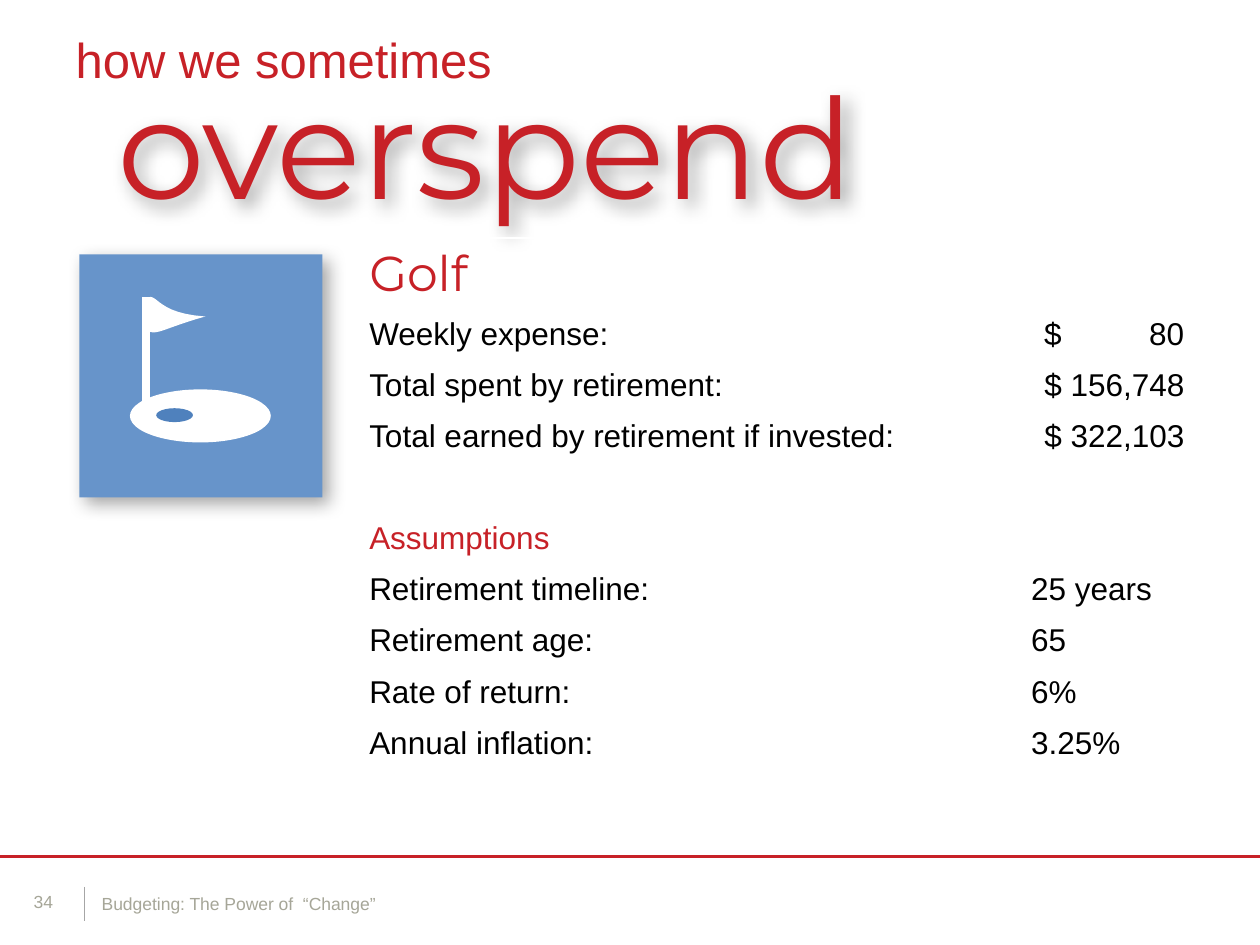
from lxml import etree
from pptx import Presentation
from pptx.dml.color import RGBColor
from pptx.enum.shapes import MSO_CONNECTOR, MSO_SHAPE
from pptx.enum.text import MSO_ANCHOR, PP_ALIGN
from pptx.oxml import parse_xml
from pptx.oxml.ns import nsdecls, qn
from pptx.util import Cm, Pt

RED = RGBColor(0xC7, 0x21, 0x27)
BLACK = RGBColor(0, 0, 0)
WHITE = RGBColor(0xFF, 0xFF, 0xFF)
GREY = RGBColor(0xA6, 0xA6, 0x98)
RULE = RGBColor(0xA6, 0xA6, 0xA6)
BLUE = RGBColor(0x67, 0x94, 0xCA)
HOLE = RGBColor(0x4F, 0x81, 0xBD)
LEFT, RIGHT = PP_ALIGN.LEFT, PP_ALIGN.RIGHT
TOP, BOTTOM = MSO_ANCHOR.TOP, MSO_ANCHOR.BOTTOM
RECT, OVAL = MSO_SHAPE.RECTANGLE, MSO_SHAPE.OVAL
STRAIGHT = MSO_CONNECTOR.STRAIGHT

TITLE = "how we sometimes"
WORD = "overspend"
PAGE = "34"
FOOTER = "Budgeting: The Power of  “Change”"
# One value alone is a heading, or an empty row, across both columns
ROWS = [
    ("Golf",),
    ("Weekly expense:", "$\t80"),
    ("Total spent by retirement:", "$ 156,748"),
    ("Total earned by retirement if invested:", "$ 322,103"),
    ("",),
    ("Assumptions",),
    ("Retirement timeline:", "25 years"),
    ("Retirement age:", "65"),
    ("Rate of return:", "6%"),
    ("Annual inflation:", "3.25%"),
]
COLS = (13.34, 3.6)
HEAD, ROW = 1.46, 1.03
INSET, TAB = 0.52, 2.82  # dollar sign and right edge of the split amount

POLE = (2.95, 8.48, 2.95, 5.99)
FLAG = (3.0, 5.99)
CURVES = [
    ((3.18, 5.94), (3.2, 6.32), (4.14, 6.38)),
    ((3.35, 6.6), (3.18, 6.76), (3.0, 6.68)),
]
STEPS = 12


def write(frame, text, size=18, color=BLACK, font="Arial", align=LEFT, tab=None):
    para = frame.paragraphs[0]
    para.text = text
    para.alignment = align
    if tab:
        tabs = etree.SubElement(para._p.get_or_add_pPr(), qn("a:tabLst"))
        etree.SubElement(tabs, qn("a:tab"), pos=str(Cm(tab)), algn="r")
    for item in [para, *para.runs]:
        item.font.size = Pt(size)
        item.font.name = font
        item.font.color.rgb = color


def label(shapes, box, text, **form):
    shape = shapes.add_textbox(*map(Cm, box))
    shape.text_frame.word_wrap = True
    write(shape.text_frame, text, **form)
    return shape


def plain(shape, color):
    shape.shadow.inherit = False
    shape.fill.solid()
    shape.fill.fore_color.rgb = color
    shape.line.fill.background()
    return shape


def form(shapes, kind, box, color):
    return plain(shapes.add_shape(kind, *map(Cm, box)), color)


def rule(shapes, ends, color, width):
    line = shapes.add_connector(STRAIGHT, *map(Cm, ends))
    line.line.color.rgb = color
    line.line.width = Pt(width)
    etree.SubElement(line._element.spPr, qn("a:effectLst"))


def shade(shape):
    """Cast a soft shadow to the lower right."""
    props = shape._element.spPr
    for old in props.findall(qn("a:effectLst")):
        props.remove(old)
    props.append(parse_xml(
        f'<a:effectLst {nsdecls("a")}>'
        f'<a:outerShdw blurRad="{Pt(10.2)}" dist="{Pt(4.8)}" dir="2700000" '
        'algn="tl" rotWithShape="0"><a:srgbClr val="000000">'
        '<a:alpha val="35000"/></a:srgbClr></a:outerShdw></a:effectLst>'))


def trace(start, curves):
    """Points along a chain of cubic curves."""
    points = []
    for one, two, end in curves:
        for step in range(1, STEPS + 1):
            t = step / STEPS
            u = 1 - t
            points.append(tuple(
                Cm(u**3 * a + 3 * u * u * t * b + 3 * u * t * t * c + t**3 * d)
                for a, b, c, d in zip(start, one, two, end)))
        start = end
    return points


def footer(shapes):
    rule(shapes, (1.7, 17.88, 1.7, 18.57), RULE, 0.25)
    label(shapes, (0.43, 17.83, 0.99, 0.69), PAGE, size=10, color=GREY)
    label(shapes, (1.8, 17.88, 10.77, 0.69), FOOTER, size=10, color=GREY)
    rule(shapes, (0, 17.27, 25.4, 17.27), RED, 1.5)


def heading(shapes):
    title = shapes.title
    title.left, title.top, title.width, title.height = map(
        Cm, (1.27, 0.46, 15.88, 1.45))
    title.text_frame.vertical_anchor = BOTTOM
    write(title.text_frame, TITLE, size=28, color=RED)
    shade(label(shapes, (2.11, 1.07, 17.55, 3.68), WORD,
                size=80, color=RED, font="Montserrat"))


def costs(shapes):
    high = HEAD + ROW * (len(ROWS) - 1)
    table = shapes.add_table(len(ROWS), len(COLS), Cm(7.19), Cm(4.8),
                             Cm(sum(COLS)), Cm(high)).table
    table.first_row = table.horz_banding = False
    for col, width in zip(table.columns, COLS):
        col.width = Cm(width)
    for r, row in enumerate(ROWS):
        table.rows[r].height = Cm(ROW if r else HEAD)
        for cell in table.rows[r].cells:
            cell.fill.background()
            cell.vertical_anchor = TOP
        first, last = table.cell(r, 0), table.cell(r, 1)
        if len(row) == 1:
            first.merge(last)
            look = {"size": 28, "font": "Montserrat"} if r == 0 else {}
            write(first.text_frame, row[0], color=RED, **look)
            continue
        write(first.text_frame, row[0])
        if "\t" in row[1]:
            last.margin_left = Cm(INSET)
            write(last.text_frame, row[1], tab=TAB)
        else:
            side = RIGHT if row[1].startswith("$") else LEFT
            write(last.text_frame, row[1], align=side)


def golf(shapes):
    shade(form(shapes, RECT, (1.6, 5.13, 4.9, 4.9), BLUE))
    icon = shapes.add_group_shape().shapes
    form(icon, OVAL, (2.62, 7.85, 2.84, 1.07), WHITE)
    form(icon, OVAL, (3.15, 8.23, 0.74, 0.28), HOLE)
    rule(icon, POLE, WHITE, 4.5)
    flag = icon.build_freeform(*map(Cm, FLAG))
    flag.add_line_segments(trace(FLAG, CURVES), close=True)
    plain(flag.convert_to_shape(), WHITE)


def main():
    deck = Presentation()
    deck.slide_width, deck.slide_height = Cm(25.4), Cm(19.05)
    shapes = deck.slides.add_slide(deck.slide_layouts[5]).shapes
    for part in (footer, heading, costs, golf):
        part(shapes)
    deck.save("out.pptx")


if __name__ == "__main__":
    main()
